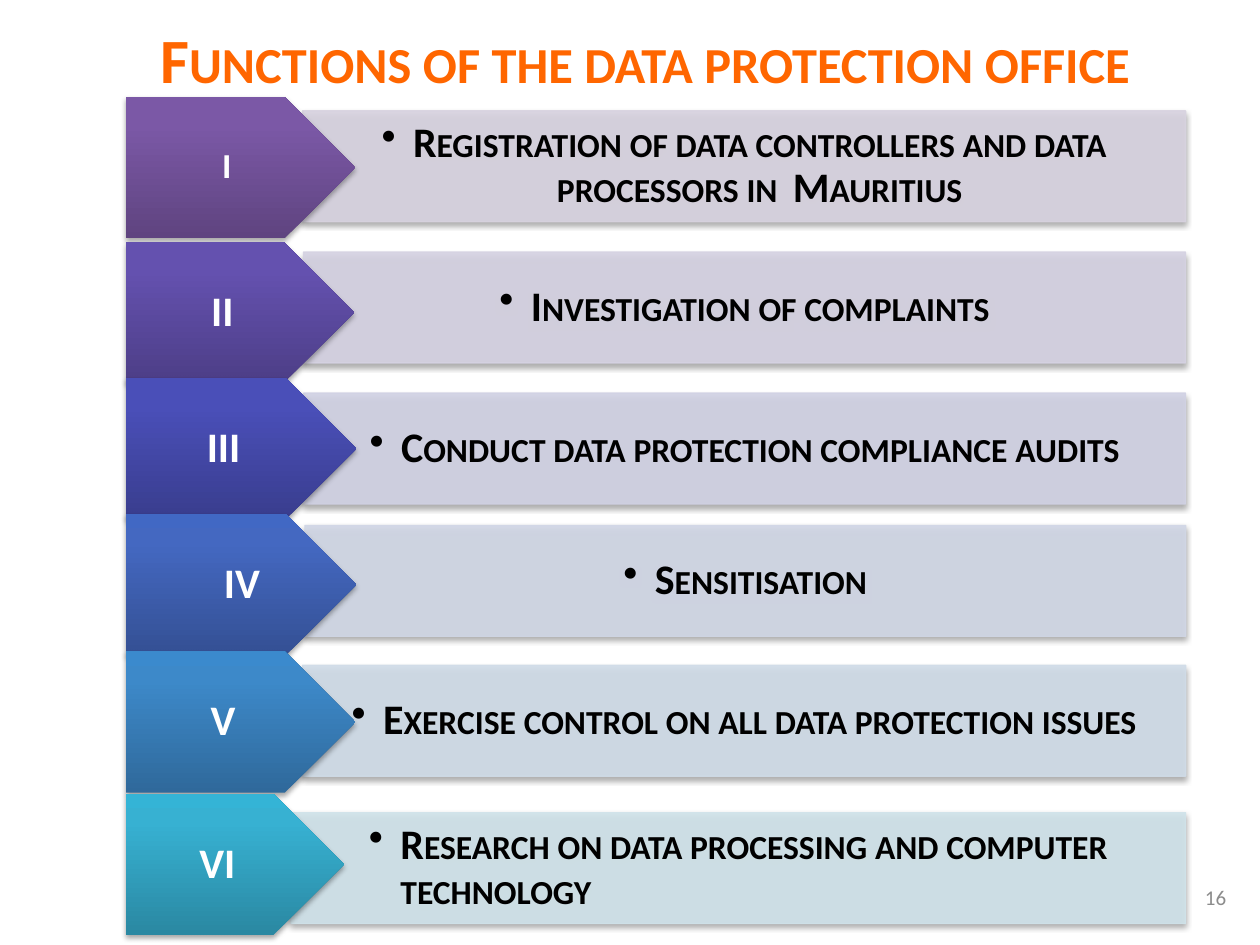
from copy import deepcopy
from dataclasses import dataclass

from lxml.etree import SubElement
from pptx import Presentation
from pptx.dml.color import RGBColor
from pptx.enum.shapes import MSO_SHAPE as Shape
from pptx.enum.text import MSO_ANCHOR as Anchor, PP_ALIGN as Align
from pptx.oxml.ns import qn
from pptx.util import Inches, Pt


@dataclass(frozen=True)
class Theme:
    font: str = "Calibri"
    title: str = "FF6600"
    text: str = "000000"
    numeral: str = "FFFFFF"
    page: str = "8C8C8C"
    title_size: int = 36
    body_size: int = 24
    small_size: int = 20
    page_size: int = 12


@dataclass(frozen=True)
class Function:
    numeral: str
    text: str
    bar_left: float
    bar_top: float
    bar_color: str
    arrow_top: float
    arrow_width: float
    gradient: tuple[str, str, str]
    numeral_size: int = Theme.body_size
    numeral_shift: float = 0
    block_centred: bool = False


THEME = Theme()
BAR_RIGHT, BAR_HEIGHT = 9.41, 0.88
ARROW_LEFT, ARROW_HEIGHT = 1, 1.12
BULLET_INDENT = 0.25
STOPS = (0, 0.8, 1)

FUNCTIONS = [
    Function("I", "Registration of data controllers and data processors in  Mauritius",
             2.4, 0.88, "D8D3E0", 0.77, 1.82, ("5F4480", "7B58A6", "7C57A8"),
             numeral_size=THEME.small_size, numeral_shift=0.06),
    Function("II", "Investigation of complaints",
             2.41, 2, "D5D2E2", 1.92, 1.81, ("4D3E87", "6451AF", "6450B2")),
    Function("III", "Conduct data protection compliance audits",
             2.41, 3.12, "D1D2E4", 3, 1.83, ("393D8E", "4A4FB8", "484EBB")),
    Function("IV", "Sensitisation",
             2.42, 4.17, "D1D7E6", 4.08, 1.83, ("345094", "4468C1", "4168C4"),
             numeral_shift=0.29),
    Function("V", "Exercise control on all data protection issues",
             2.4, 5.28, "D0DCE8", 5.17, 1.82, ("2F699B", "3D89C9", "3B8ACD"),
             block_centred=True),
    Function("VI", "Research on data processing and computer technology",
             2.31, 6.45, "D0E3EA", 6.3, 1.73, ("2A88A2", "37B1D2", "34B4D6"),
             block_centred=True),
]


def write(sp, text: str, size: int, color: str, align, bold=True, small_caps=False):
    tf = sp.text_frame
    tf.word_wrap = True
    tf.vertical_anchor = Anchor.MIDDLE
    tf.text = text
    p = tf.paragraphs[0]
    p.alignment = align
    r = p.runs[0]
    r.font.name = THEME.font
    r.font.size = Pt(size)
    r.font.bold = bold
    r.font.color.rgb = RGBColor.from_string(color)
    if small_caps:
        r.font._element.set("cap", "small")
    return p


def add_label(slide, text: str, left: float, top: float, width: float, height: float,
              size: int, color: str, align, **style):
    sp = slide.shapes.add_textbox(Inches(left), Inches(top), Inches(width), Inches(height))
    write(sp, text, size, color, align, **style)


def add_shadow(sp) -> None:
    sp.shadow.inherit = False
    effects = sp._element.spPr.find(qn("a:effectLst"))
    shadow = SubElement(effects, qn("a:outerShdw"), blurRad=str(Pt(3.1)), dist=str(Pt(1.8)),
                        dir="5400000", rotWithShape="0")
    color = SubElement(shadow, qn("a:srgbClr"), val="000000")
    SubElement(color, qn("a:alpha"), val="35000")


def add_bar(slide, item: Function) -> None:
    sp = slide.shapes.add_shape(Shape.FLOWCHART_PROCESS, Inches(item.bar_left), Inches(item.bar_top),
                                Inches(BAR_RIGHT - item.bar_left), Inches(BAR_HEIGHT))
    sp.fill.solid()
    sp.fill.fore_color.rgb = RGBColor.from_string(item.bar_color)
    sp.line.color.rgb = RGBColor.from_string(item.bar_color)
    sp.line.width = Pt(0.75)
    for color in sp._element.spPr.iter(qn("a:srgbClr")):
        SubElement(color, qn("a:alpha"), val="90000")
    add_shadow(sp)
    tf = sp.text_frame
    tf.margin_left = tf.margin_right = tf.margin_top = tf.margin_bottom = Inches(0.02)
    p = write(sp, item.text, THEME.body_size, THEME.text,
              Align.LEFT if item.block_centred else Align.CENTER, small_caps=True)
    if item.block_centred:
        tf._txBody.bodyPr.set("anchorCtr", "1")
    props = p._p.get_or_add_pPr()
    props.set("marL", str(Inches(BULLET_INDENT)))
    props.set("indent", str(-Inches(BULLET_INDENT)))
    SubElement(props, qn("a:buChar"), char="•")
    p.line_spacing = 0.9


def add_arrow(slide, item: Function) -> None:
    sp = slide.shapes.add_shape(Shape.PENTAGON, Inches(ARROW_LEFT), Inches(item.arrow_top),
                                Inches(item.arrow_width), Inches(ARROW_HEIGHT))
    sp.fill.gradient()
    sp.fill.gradient_angle = 90
    stop_list = next(sp._element.spPr.iter(qn("a:gsLst")))
    stop_list.append(deepcopy(stop_list[-1]))
    for stop, position, color in zip(sp.fill.gradient_stops, STOPS, item.gradient):
        stop.position = position
        stop.color.rgb = RGBColor.from_string(color)
    sp.line.fill.background()
    add_shadow(sp)
    sp.text_frame.margin_left = Inches(0.1 + item.numeral_shift)
    p = write(sp, item.numeral, item.numeral_size, THEME.numeral, Align.CENTER)
    p.line_spacing = 0.9


def main() -> None:
    prs = Presentation()
    prs.slide_width, prs.slide_height = Inches(10), Inches(7.5)
    slide = prs.slides.add_slide(prs.slide_layouts[6])
    add_label(slide, "Functions of the data protection office", 0.83, 0.25, 8.58, 0.42,
              THEME.title_size, THEME.title, Align.CENTER, small_caps=True)
    for item in FUNCTIONS:
        add_bar(slide, item)
        add_arrow(slide, item)
    add_label(slide, "16", 7.5, 6.92, 2.33, 0.4,
              THEME.page_size, THEME.page, Align.RIGHT, bold=False)
    prs.save("out.pptx")


if __name__ == "__main__":
    main()
